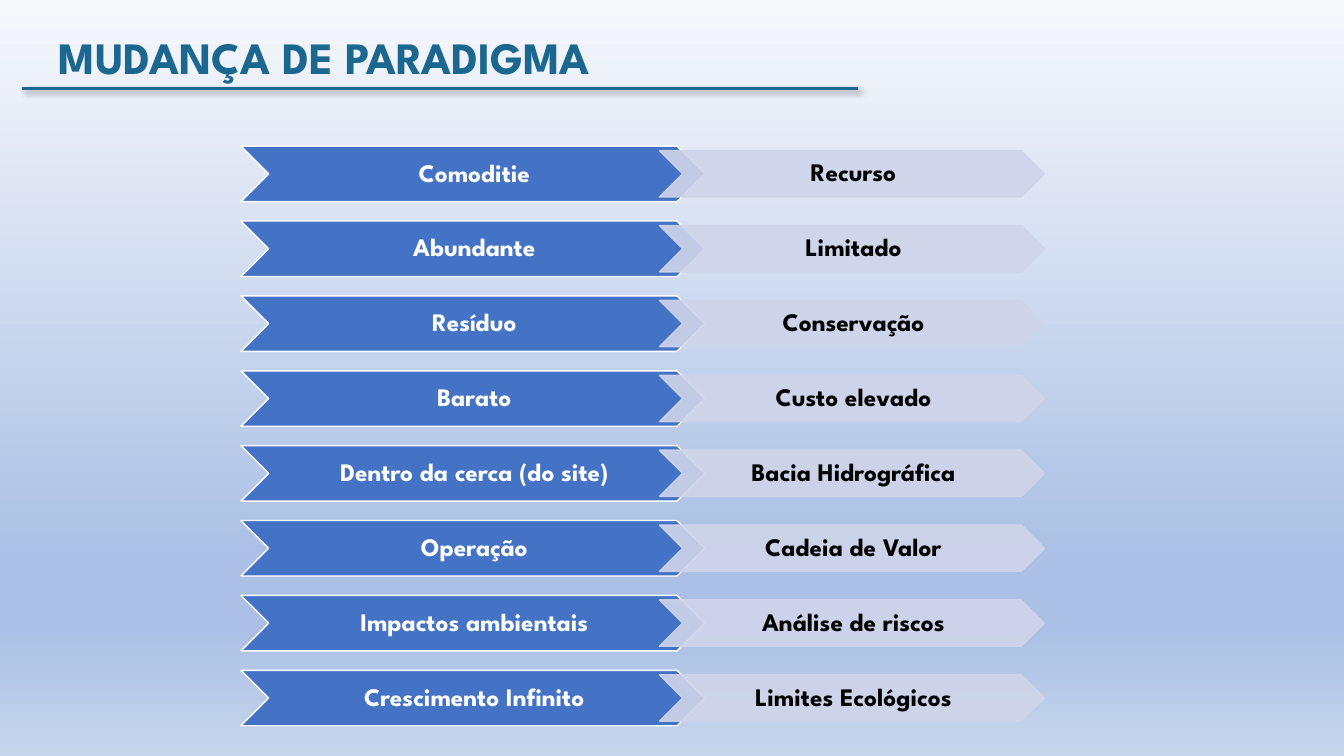
import pptx
import pptx.util
import pptx.dml.color
import pptx.enum.shapes
import pptx.enum.text
import pptx.oxml.ns
from lxml import etree

RGBColor = pptx.dml.color.RGBColor
qn = pptx.oxml.ns.qn
Inches = pptx.util.Inches
Pt = pptx.util.Pt

TEAL = RGBColor(0x1C, 0x67, 0x8F)
BLUE = RGBColor(0x44, 0x72, 0xC4)
PALE = RGBColor(0xCF, 0xD5, 0xEA)
WHITE = RGBColor(0xFF, 0xFF, 0xFF)
BLACK = RGBColor(0x00, 0x00, 0x00)
SKY_STOPS = [
    (0, RGBColor(0xF6, 0xF8, 0xFC)),
    (74, RGBColor(0xAB, 0xC0, 0xE4)),
    (83, RGBColor(0xAB, 0xC0, 0xE4)),
    (100, RGBColor(0xC7, 0xD5, 0xED)),
]
FONT = "League Spartan"
SLIDE_WIDTH, SLIDE_HEIGHT = 13.33, 7.5

PARADIGMS = [
    ("Comoditie", "Recurso"),
    ("Abundante", "Limitado"),
    ("Resíduo", "Conservação"),
    ("Barato", "Custo elevado"),
    ("Dentro da cerca (do site)", "Bacia Hidrográfica"),
    ("Operação", "Cadeia de Valor"),
    ("Impactos ambientais", "Análise de riscos"),
    ("Crescimento Infinito", "Limites Ecológicos"),
]


def paint_background(slide):
    """Fill the slide with the vertical sky gradient."""
    fill = slide.background.fill
    fill.gradient()
    fill.gradient_angle = 270
    stops = next(slide.background._cSld.iter(qn("a:gsLst")))
    for stop in list(stops):
        stops.remove(stop)
    for share, color in SKY_STOPS:
        stop = etree.SubElement(stops, qn("a:gs"), pos=str(share * 1000))
        etree.SubElement(stop, qn("a:srgbClr"), val=str(color))


def drop_shadow():
    """Return an effect list with a soft shadow to the lower right."""
    effects = etree.Element(qn("a:effectLst"))
    shadow = etree.SubElement(
        effects, qn("a:outerShdw"), blurRad=str(Pt(4)), dist=str(Pt(3)),
        dir="2700000", algn="tl", rotWithShape="0")
    color = etree.SubElement(shadow, qn("a:srgbClr"), val=str(BLACK))
    etree.SubElement(color, qn("a:alpha"), val="40000")
    return effects


def set_opacity(fill_parent, percent):
    """Make the colours found below an element partly transparent."""
    for color in fill_parent.iter(qn("a:srgbClr")):
        etree.SubElement(color, qn("a:alpha"), val=str(percent * 1000))


def add_heading(slide, left, top, width, height):
    """Place the title in its box with the rule along the bottom edge."""
    title = slide.shapes.title
    title.left, title.top = Inches(left + 0.26), Inches(top)
    title.width, title.height = Inches(6.07), Inches(height)
    frame = title.text_frame
    frame.word_wrap = False
    frame.auto_size = pptx.enum.text.MSO_AUTO_SIZE.SHAPE_TO_FIT_TEXT
    frame.vertical_anchor = pptx.enum.text.MSO_ANCHOR.TOP
    frame.text = "MUDANÇA DE PARADIGMA"
    paragraph = frame.paragraphs[0]
    paragraph.alignment = pptx.enum.text.PP_ALIGN.LEFT
    font = paragraph.runs[0].font
    font.size, font.bold, font.name = Pt(32), True, FONT
    font.color.rgb = TEAL
    font._rPr.find(qn("a:solidFill")).addnext(drop_shadow())

    rule_y = Inches(top + height)
    rule = slide.shapes.add_connector(
        pptx.enum.shapes.MSO_CONNECTOR.STRAIGHT,
        Inches(left + width), rule_y, Inches(left), rule_y)
    rule.line.color.rgb = TEAL
    rule.line.width = Pt(2.25)
    rule._element.spPr.append(drop_shadow())


def add_chevron(slide, label, box, fill_color, line_color, text_color):
    """Draw one labelled chevron in the given box and return it."""
    chevron = slide.shapes.add_shape(
        pptx.enum.shapes.MSO_SHAPE.CHEVRON, *(Inches(length) for length in box))
    chevron.shadow.inherit = False
    chevron.fill.solid()
    chevron.fill.fore_color.rgb = fill_color
    chevron.line.color.rgb = line_color
    chevron.line.width = Pt(1)
    frame = chevron.text_frame
    frame.word_wrap = True
    frame.vertical_anchor = pptx.enum.text.MSO_ANCHOR.MIDDLE
    frame.margin_left, frame.margin_right = Inches(0.03), 0
    frame.margin_top = frame.margin_bottom = Inches(0.01)
    frame.text = label
    paragraph = frame.paragraphs[0]
    paragraph.alignment = pptx.enum.text.PP_ALIGN.CENTER
    paragraph.line_spacing = 0.9
    font = paragraph.font
    font.size, font.bold, font.name = Pt(18), True, FONT
    font.color.rgb = text_color
    return chevron


def add_paradigm_rows(slide, left, top, width, height):
    """Stack the old and new paradigm chevrons, one pair per row."""
    old_width, old_height = 4.6, 0.55
    new_width, new_height = 3.82, 0.46
    pitch = (height - old_height) / (len(PARADIGMS) - 1)
    for row, (old, new) in enumerate(PARADIGMS):
        row_top = top + row * pitch
        add_chevron(slide, old, (left, row_top, old_width, old_height),
                    BLUE, WHITE, WHITE)
        new_box = (left + width - new_width,
                   row_top + (old_height - new_height) / 2,
                   new_width, new_height)
        recent = add_chevron(slide, new, new_box, PALE, PALE, BLACK)
        set_opacity(recent._element.spPr, 90)


def main():
    """Build the slide and save it."""
    deck = pptx.Presentation()
    deck.slide_width = Inches(SLIDE_WIDTH)
    deck.slide_height = Inches(SLIDE_HEIGHT)
    slide = deck.slides.add_slide(deck.slide_layouts[5])
    paint_background(slide)
    add_heading(slide, 0.22, 0.24, 8.29, 0.64)
    add_paradigm_rows(slide, 2.39, 1.45, 7.97, 5.75)
    deck.save("out.pptx")


if __name__ == "__main__":
    main()
